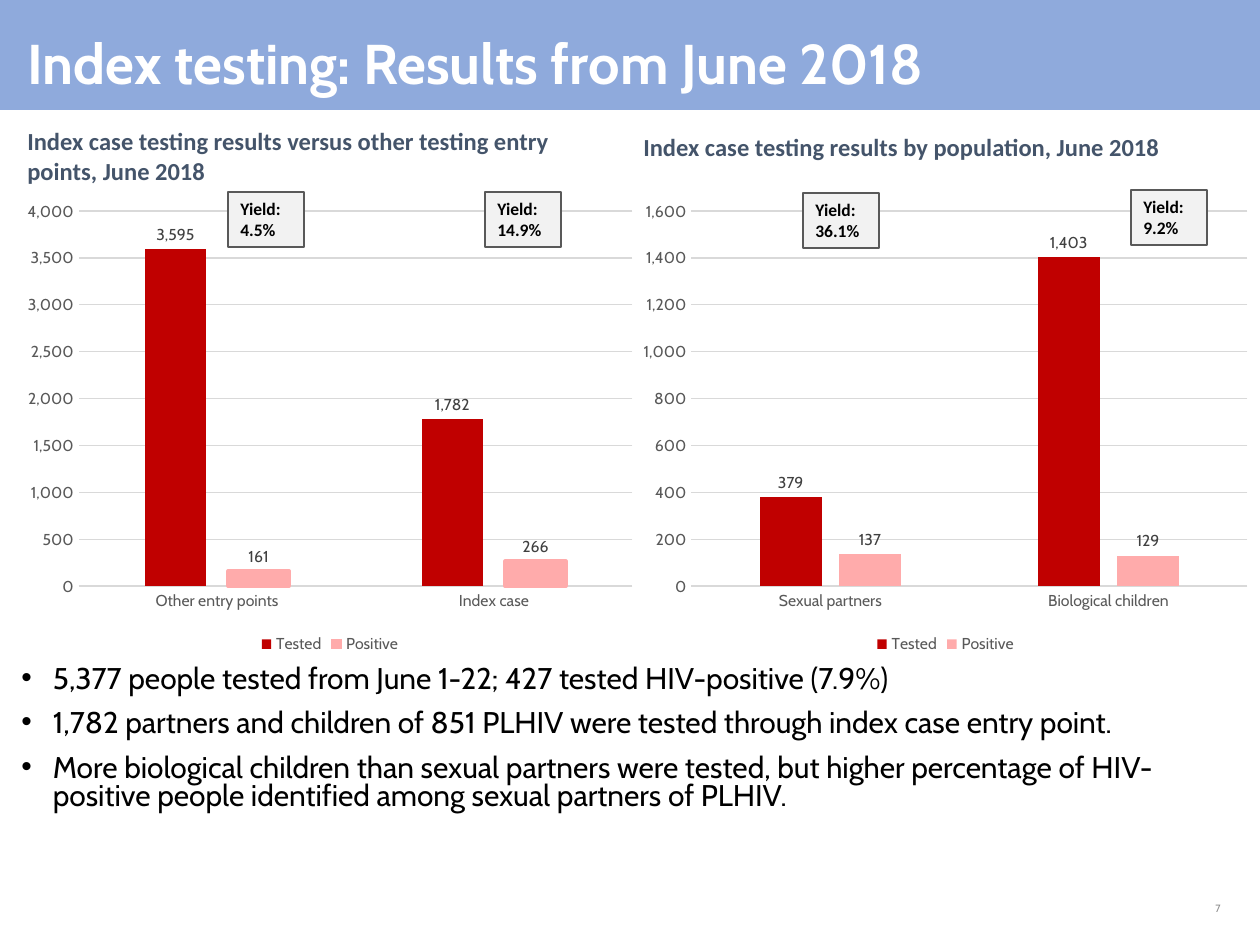
from lxml import etree
from pptx import Presentation
from pptx import util as u
from pptx.chart.data import CategoryChartData
from pptx.dml.color import RGBColor
from pptx.enum import chart as ch, shapes, text
from pptx.oxml.ns import qn

SCALE = 914400 / 126
RED, PINK = "C00000", "FFABAB"
GREY, RULE = "595959", "D9D9D9"


def px(n):
    return u.Emu(round(n * SCALE))


def color(code):
    return RGBColor.from_string(code)


def style(font, face, size, code, bold=False):
    font.name, font.size, font.bold = face, u.Pt(size), bold
    font.color.rgb = color(code)


def stroke(line, code, width):
    line.color.rgb = color(code)
    line.width = u.Pt(width)


def write(shape, words, face, size, code, bold=False,
          align=text.PP_ALIGN.LEFT, anchor=text.MSO_ANCHOR.TOP):
    frame = shape.text_frame
    frame.word_wrap = True
    frame.vertical_anchor = anchor
    para = frame.paragraphs[0]
    para.text, para.alignment = words, align
    style(para.font, face, size, code, bold)


def add_text(slide, box, *args, **kinds):
    shape = slide.shapes.add_textbox(*map(px, box))
    write(shape, *args, **kinds)
    return shape


def add_rect(slide, box, fill):
    rect = slide.shapes.add_shape(shapes.MSO_SHAPE.RECTANGLE, *map(px, box))
    rect.shadow.inherit = False
    rect.fill.solid()
    rect.fill.fore_color.rgb = color(fill)
    rect.line.fill.background()
    return rect


def add_header(slide, box, words):
    left, top, width, height = box
    add_rect(slide, box, "8FAADC")
    add_text(slide, (left + 15, top + 9, width - 40, height - 17), words,
             "Cabin", 32, "FFFFFF", True, anchor=text.MSO_ANCHOR.BOTTOM)


def add_tag(slide, box, words):
    tag = add_rect(slide, box, "F2F2F2")
    stroke(tag.line, GREY, 0.75)
    write(tag, words, "Calibri", 10, "000000", True)


def add_bars(slide, box, cats, tested, found, overlap, top, step, edge):
    data = CategoryChartData(number_format="#,##0")
    data.categories = cats
    data.add_series("Tested", tested)
    data.add_series("Positive", found)
    chart = slide.shapes.add_chart(
        ch.XL_CHART_TYPE.COLUMN_CLUSTERED, *map(px, box), data).chart
    style(chart.font, "Cabin", 10, "000000")
    chart.has_title = False
    chart.has_legend = True
    chart.legend.position = ch.XL_LEGEND_POSITION.BOTTOM
    chart.legend.include_in_layout = False
    style(chart.legend.font, "Cabin", 9, GREY)

    for axis in (chart.category_axis, chart.value_axis):
        axis.major_tick_mark = axis.minor_tick_mark = ch.XL_TICK_MARK.NONE
        style(axis.tick_labels.font, "Cabin", 9, GREY)
    stroke(chart.category_axis.format.line, RULE, 0.75)
    scale = chart.value_axis
    scale.minimum_scale, scale.maximum_scale, scale.major_unit = 0, top, step
    scale.format.line.fill.background()
    stroke(scale.major_gridlines.format.line, RULE, 0.75)
    scale.tick_labels.number_format = "#,##0"
    scale.tick_labels.number_format_is_linked = False

    plot = chart.plots[0]
    plot.gap_width, plot.overlap = 219, overlap
    plot.vary_by_categories = False
    for series, fill in zip(plot.series, (RED, PINK)):
        series.format.fill.solid()
        series.format.fill.fore_color.rgb = color(fill)
        labels = series.data_labels
        labels.show_value = True
        labels.position = ch.XL_LABEL_POSITION.OUTSIDE_END
        labels.number_format = "#,##0"
        labels.number_format_is_linked = False
        style(labels.font, "Cabin", 9, "404040")
    if edge:
        stroke(plot.series[1].format.line, PINK, edge)


def add_panel(slide, box, title, drop, tags, *bars):
    left, top, width, height = box
    add_text(slide, (left, top + drop, 577, 72 - drop), title,
             "Calibri", 14, "44546A", True)
    add_bars(slide, (left, top + 72, width, height - 72), *bars)
    for across, down, rate in tags:
        add_tag(slide, (left + across, top + down, 76, 55), f"Yield: {rate}")


def add_points(slide, box, points):
    frame = slide.shapes.add_textbox(*map(px, box)).text_frame
    frame.word_wrap = True
    for i, words in enumerate(points):
        para = frame.add_paragraph() if i else frame.paragraphs[0]
        para.text = words
        para.line_spacing, para.space_after = 0.8, u.Pt(9)
        props = para._p.get_or_add_pPr()
        props.set("marL", str(u.Inches(0.25)))
        props.set("indent", str(-u.Inches(0.25)))
        etree.SubElement(props, qn("a:buFont")).set("typeface", "Arial")
        etree.SubElement(props, qn("a:buChar")).set("char", "•")
        style(para.font, "Cabin", 17.1, "000000")


def main():
    deck = Presentation()
    deck.slide_width, deck.slide_height = px(1260), px(945)
    slide = deck.slides.add_slide(deck.slide_layouts[6])
    add_header(slide, (0, 0, 1260, 110), "Index testing: Results from June 2018")
    add_points(slide, (9, 660, 1231, 188), (
        "5,377 people tested from June 1-22; 427 tested HIV-positive (7.9%)",
        "1,782 partners and children of 851 PLHIV were tested through index "
        "case entry point.",
        "More biological children than sexual partners were tested, but higher "
        "percentage of HIV-positive people identified among sexual partners "
        "of PLHIV."))
    add_panel(slide, (15, 120, 630, 539),
              "Index case testing results versus other testing entry points, "
              "June 2018", 0,
              ((213, 72, "4.5%"), (470, 72, "14.9%")),
              ("Other entry points", "Index case"),
              (3595, 1782), (161, 266), -37, 4000, 500, 2)
    add_panel(slide, (631, 120, 629, 539),
              "Index case testing results by population, June 2018", 6,
              ((172, 73, "36.1%"), (500, 70, "9.2%")),
              ("Sexual partners", "Biological children"),
              (379, 1403), (137, 129), -27, 1600, 200, 0)
    add_text(slide, (1160, 883, 73, 50), "7", "Cabin", 6, "8C8C8C",
             align=text.PP_ALIGN.RIGHT, anchor=text.MSO_ANCHOR.MIDDLE)
    deck.save("out.pptx")


if __name__ == "__main__":
    main()
